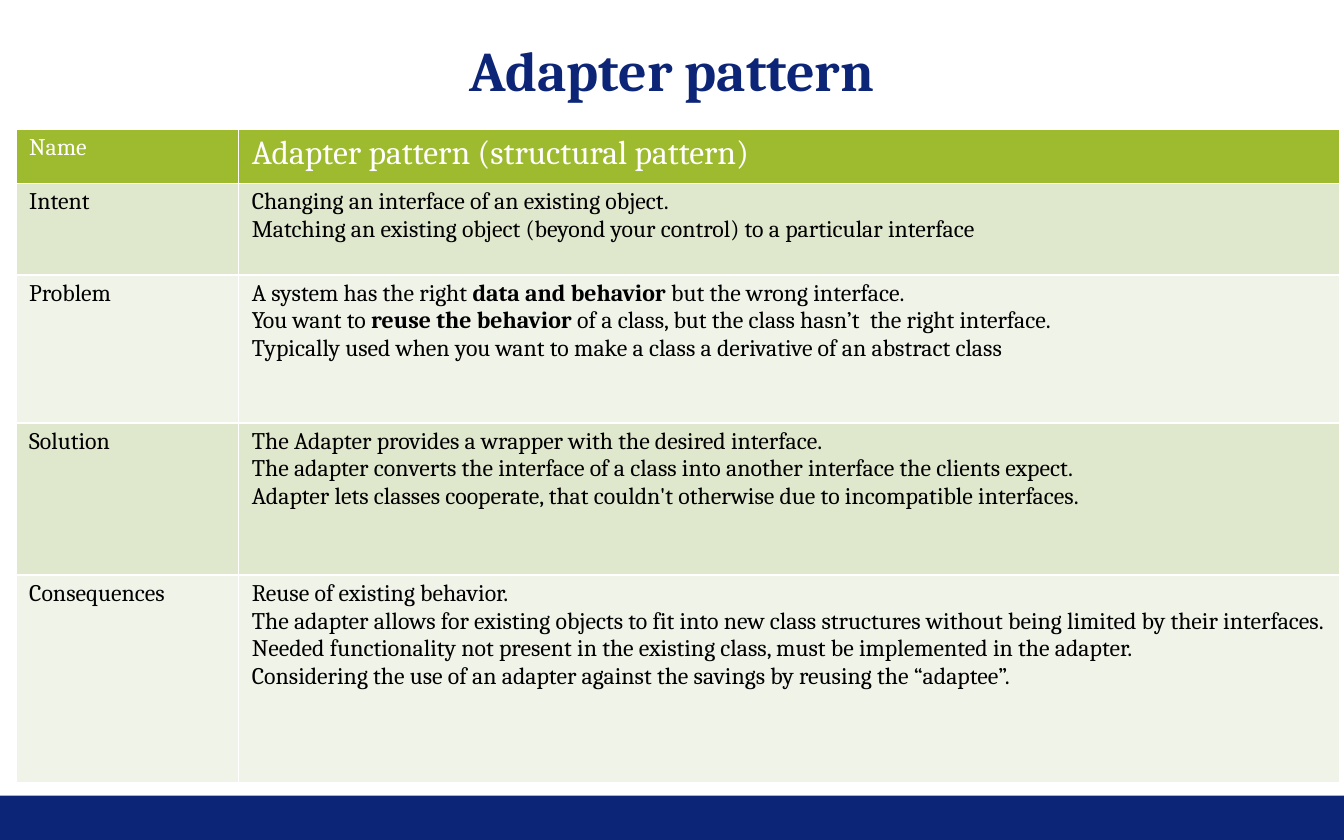
from lxml.etree import SubElement
from pptx import Presentation
from pptx.dml.color import RGBColor
from pptx.enum.shapes import MSO_SHAPE as SHAPE
from pptx.enum.text import MSO_ANCHOR as ANCHOR, PP_ALIGN as ALIGN
from pptx.oxml.ns import qn
from pptx.util import Pt

PX = 9144
FONT = "Cambria"
NAVY, GREEN, WHITE, BLACK = "0C2577", "9EBA2E", "FFFFFF", "000000"
BANDS = ["DFE7CD", "F0F3E8"]
COLUMNS = [221, 1093]
ROW_HEIGHTS = [54, 91, 147, 151, 206]
ROWS = [
    ("Name", ["Adapter pattern (structural pattern)"]),
    ("Intent", [
        "Changing an interface of an existing object.",
        "Matching an existing object (beyond your control) to a particular interface",
    ]),
    ("Problem", [
        "A system has the right **data and behavior **but the wrong interface.",
        "You want to **reuse the behavior **of a class, but the class hasn’t  the right interface.",
        "Typically used when you want to make a class a derivative of an abstract class",
    ]),
    ("Solution", [
        "The Adapter provides a wrapper with the desired interface.",
        "The adapter converts the interface of a class into another interface the clients expect.",
        "Adapter lets classes cooperate, that couldn't otherwise due to incompatible interfaces.",
    ]),
    ("Consequences", [
        "Reuse of existing behavior.",
        "The adapter allows for existing objects to fit into new class structures "
        "without being limited by their interfaces.",
        "Needed functionality not present in the existing class, must be implemented in the adapter.",
        "Considering the use of an adapter against the savings by reusing the “adaptee”.",
    ]),
]


def px(*lengths):
    """Turn px lengths into EMU."""
    return [n * PX for n in lengths]


def rgb(color):
    """Turn a hex string into a colour."""
    return RGBColor.from_string(color)


def write(tf, lines, size, color, bold=False, align=ALIGN.LEFT):
    """Write one paragraph a line; text between double asterisks is bold."""
    for i, line in enumerate(lines):
        p = tf.paragraphs[0] if i == 0 else tf.add_paragraph()
        p.alignment = align
        f = p.font
        f.name, f.size, f.bold = FONT, Pt(size), bold
        f.color.rgb = rgb(color)
        for j, part in enumerate(line.split("**")):
            r = p.add_run()
            r.text = part
            if j % 2:
                r.font.bold = True


def add_borders(cell, color, width):
    """Draw a line on all four sides of a cell."""
    tcPr = cell._tc.get_or_add_tcPr()
    for side in ("lnL", "lnR", "lnT", "lnB"):
        ln = SubElement(tcPr, qn(f"a:{side}"), w=str(Pt(width)))
        fill = SubElement(ln, qn("a:solidFill"))
        SubElement(fill, qn("a:srgbClr"), val=color)


def add_footer(s, x, y, w, h):
    """Add the plain footer band."""
    sp = s.shapes.add_shape(SHAPE.RECTANGLE, *px(x, y, w, h))
    sp.shadow.inherit = False
    sp.fill.solid()
    sp.fill.fore_color.rgb = rgb(NAVY)
    sp.line.fill.background()


def add_title(s, x, y, w, h, text):
    """Add the centred slide title."""
    tf = s.shapes.add_textbox(*px(x, y, w, h)).text_frame
    tf.word_wrap = True
    tf.vertical_anchor = ANCHOR.MIDDLE
    tf.margin_left = tf.margin_right = tf.margin_top = tf.margin_bottom = 0
    write(tf, [text], 40, NAVY, True, ALIGN.CENTER)


def add_pattern_table(s, x, y, w, h):
    """Add the table of pattern aspects with a header and banded rows."""
    table = s.shapes.add_table(len(ROWS), len(COLUMNS), *px(x, y, w, h)).table
    table.first_row = table.horz_banding = False
    for column, width in zip(table.columns, px(*COLUMNS)):
        column.width = width
    for row, height in zip(table.rows, px(*ROW_HEIGHTS)):
        row.height = height
    for i, (label, lines) in enumerate(ROWS):
        header = i == 0
        for j, content in enumerate(([label], lines)):
            cell = table.cell(i, j)
            cell.margin_left, cell.margin_right = px(13, 13)
            cell.margin_top, cell.margin_bottom = px(5, 5)
            add_borders(cell, WHITE, 1)
            cell.fill.solid()
            cell.fill.fore_color.rgb = rgb(GREEN if header else BANDS[(i - 1) % 2])
            write(cell.text_frame, content, 24 if header and j else 17,
                  WHITE if header else BLACK)


def main():
    """Build the slide and save it."""
    prs = Presentation()
    prs.slide_width, prs.slide_height = px(1334, 834)
    s = prs.slides.add_slide(prs.slide_layouts[6])
    add_footer(s, 0, 790, 1334, 44)
    add_title(s, 44, 44, 1246, 49, "Adapter pattern")
    add_pattern_table(s, 16, 128, sum(COLUMNS), sum(ROW_HEIGHTS))
    prs.save("out.pptx")


if __name__ == "__main__":
    main()
